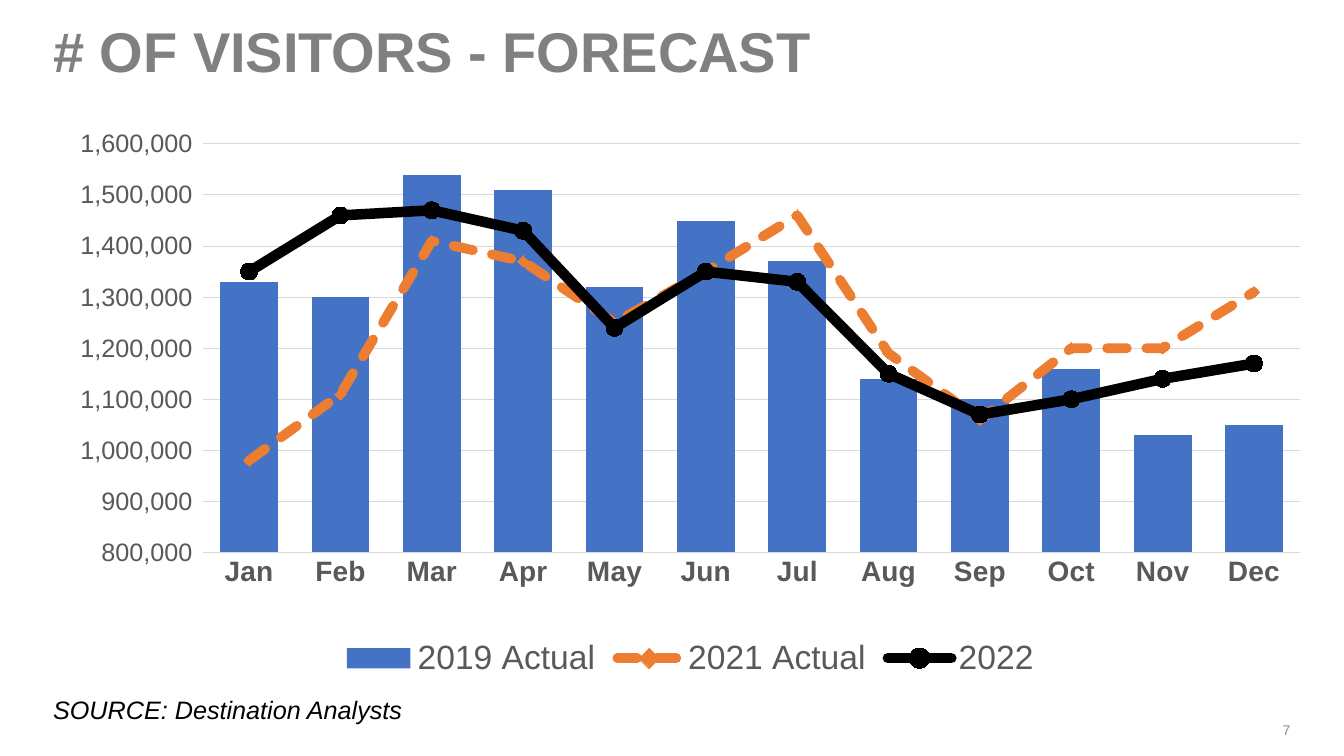
"""Build the visitor forecast slide: monthly columns with two lines."""
from pptx import Presentation
from pptx.chart.data import CategoryChartData
from pptx.dml.color import RGBColor
from pptx.enum.chart import XL_CHART_TYPE as CT, XL_LEGEND_POSITION as LP
from pptx.enum.chart import XL_MARKER_STYLE as MS, XL_TICK_MARK as TM
from pptx.enum.dml import MSO_LINE
from pptx.enum.text import MSO_ANCHOR, PP_ALIGN
from pptx.oxml import parse_xml
from pptx.oxml.ns import nsdecls
from pptx.util import Cm, Pt

GRAY = RGBColor(0x80, 0x80, 0x80)
LIGHT = RGBColor(0x8C, 0x8C, 0x8C)
DARK = RGBColor(0x59, 0x59, 0x59)
GRID = RGBColor(0xD9, 0xD9, 0xD9)
BLACK = RGBColor(0, 0, 0)
BLUE = RGBColor(0x44, 0x72, 0xC4)
ORANGE = RGBColor(0xED, 0x7D, 0x31)

MONTHS = "Jan Feb Mar Apr May Jun Jul Aug Sep Oct Nov Dec".split()
VISITORS = {
    "2019 Actual": (1330, 1300, 1540, 1510, 1320, 1450,
                    1370, 1140, 1100, 1160, 1030, 1050),
    "2021 Actual": (980, 1110, 1410, 1370, 1250, 1350,
                    1460, 1190, 1060, 1200, 1200, 1310),
    "2022": (1350, 1460, 1470, 1430, 1240, 1350,
             1330, 1150, 1070, 1100, 1140, 1170),
}
LINES = (
    (ORANGE, 7, MSO_LINE.SQUARE_DOT, MS.DIAMOND, 8),
    (BLACK, 7.5, MSO_LINE.SOLID, MS.CIRCLE, 12),
)


class SlideBuilder:
    """Hold the font and the current slide, and add its elements."""

    def __init__(self, prs, font):
        self.font = font
        self.slide = prs.slides.add_slide(prs.slide_layouts[5])

    def style(self, font, size, color, **more):
        values = {"name": self.font, "size": Pt(size), **more}
        for key, value in values.items():
            setattr(font, key, value)
        font.color.rgb = color

    def fill_text(self, sp, text, size, color, align, anchor, **more):
        tf = sp.text_frame
        tf.word_wrap = True
        tf.vertical_anchor = anchor
        p = tf.paragraphs[0]
        p.alignment = align
        r = p.add_run()
        r.text = text
        self.style(r.font, size, color, **more)
        return p

    def title(self, text, box):
        sp = self.slide.shapes.title
        sp.left, sp.top, sp.width, sp.height = map(Cm, box)
        p = self.fill_text(sp, text, 40, GRAY, PP_ALIGN.LEFT,
                           MSO_ANCHOR.MIDDLE, bold=True)
        p.line_spacing = 0.9

    def text(self, text, box, size, color, align=PP_ALIGN.LEFT,
             anchor=MSO_ANCHOR.TOP, **more):
        sp = self.slide.shapes.add_textbox(*map(Cm, box))
        self.fill_text(sp, text, size, color, align, anchor, **more)

    def chart(self, box):
        data = CategoryChartData(number_format="#,##0")
        data.categories = MONTHS
        for name, thousands in VISITORS.items():
            data.add_series(name, [v * 1000 for v in thousands])
        chart = self.slide.shapes.add_chart(
            CT.COLUMN_CLUSTERED, *map(Cm, box), data).chart
        chart.has_title = False
        self.style(chart.font, 10, BLACK)
        self.axes(chart)
        self.legend(chart)
        self.split_lines(chart)
        self.series(chart)
        plot_area = chart.element.xpath("//c:plotArea")[0]
        for old in plot_area.xpath("c:layout"):
            plot_area.remove(old)
        plot_area.insert(0, self.layout(x=0.126, y=0.039, w=0.862, h=0.72))

    def axes(self, chart):
        cat, val = chart.category_axis, chart.value_axis
        for axis in (cat, val):
            axis.major_tick_mark = axis.minor_tick_mark = TM.NONE
        self.style(cat.tick_labels.font, 20, DARK, bold=True)
        self.style(val.tick_labels.font, 18, DARK, bold=False)
        val.minimum_scale, val.maximum_scale = 800000, 1600000
        val.major_unit = 100000
        val.tick_labels.number_format = "#,##0_)"
        val.tick_labels.number_format_is_linked = False
        val.format.line.fill.background()
        for part in (cat, val.major_gridlines):
            part.format.line.color.rgb = GRID
            part.format.line.width = Pt(0.75)

    def legend(self, chart):
        chart.has_legend = True
        chart.legend.position = LP.BOTTOM
        chart.legend.include_in_layout = False
        self.style(chart.legend.font, 24, DARK)
        legend = chart.element.xpath("//c:legend")[0]
        for old in legend.xpath("c:layout"):
            legend.remove(old)
        legend.xpath("c:legendPos")[0].addnext(self.layout(x=0.23, y=0.9))

    def layout(self, **sizes):
        inner = '<c:layoutTarget val="inner"/>' if "w" in sizes else ""
        modes = "".join(f'<c:{k}Mode val="edge"/>' for k in "xy")
        values = "".join(f'<c:{k} val="{v}"/>' for k, v in sizes.items())
        return parse_xml(f'<c:layout {nsdecls("c")}><c:manualLayout>{inner}'
                         f'{modes}{values}</c:manualLayout></c:layout>')

    def split_lines(self, chart):
        bar = chart.element.xpath("//c:barChart")[0]
        axes = "".join(f'<c:axId val="{i}"/>' for i in bar.xpath("c:axId/@val"))
        line = parse_xml(
            f'<c:lineChart {nsdecls("c")}><c:grouping val="standard"/>'
            f'<c:varyColors val="0"/><c:marker val="1"/>{axes}</c:lineChart>')
        bar.addnext(line)
        for ser in bar.xpath("c:ser")[1:]:
            for invert in ser.xpath("c:invertIfNegative"):
                ser.remove(invert)
            line.xpath("c:marker")[0].addprevious(ser)

    def series(self, chart):
        bars, lines = chart.plots
        bars.gap_width = 58
        bars.vary_by_categories = False
        fill = bars.series[0].format.fill
        fill.solid()
        fill.fore_color.rgb = BLUE
        for s, (color, width, dash, symbol, size) in zip(lines.series, LINES):
            s.smooth = False
            line, marker = s.format.line, s.marker
            line.color.rgb = color
            line.width = Pt(width)
            line.dash_style = dash
            marker.style, marker.size = symbol, size
            marker.format.fill.solid()
            marker.format.fill.fore_color.rgb = color
            marker.format.line.color.rgb = color
        for ln in chart.element.xpath("//c:lineChart/c:ser/c:spPr/a:ln"):
            ln.set("cap", "rnd")


def main():
    prs = Presentation()
    prs.slide_width, prs.slide_height = Cm(33.87), Cm(19.05)
    s = SlideBuilder(prs, "Arial")
    s.title("# OF VISITORS - FORECAST", (1.09, 0.41, 26.97, 1.9))
    s.text("7", (25.15, 17.88, 7.62, 1.02), 10, LIGHT,
           PP_ALIGN.RIGHT, MSO_ANCHOR.MIDDLE)
    s.text("SOURCE: Destination Analysts", (1.09, 17.37, 10.8, 1.02),
           18, BLACK, italic=True)
    s.chart((1.09, 3.07, 32.05, 14.3))
    prs.save("out.pptx")


if __name__ == "__main__":
    main()
